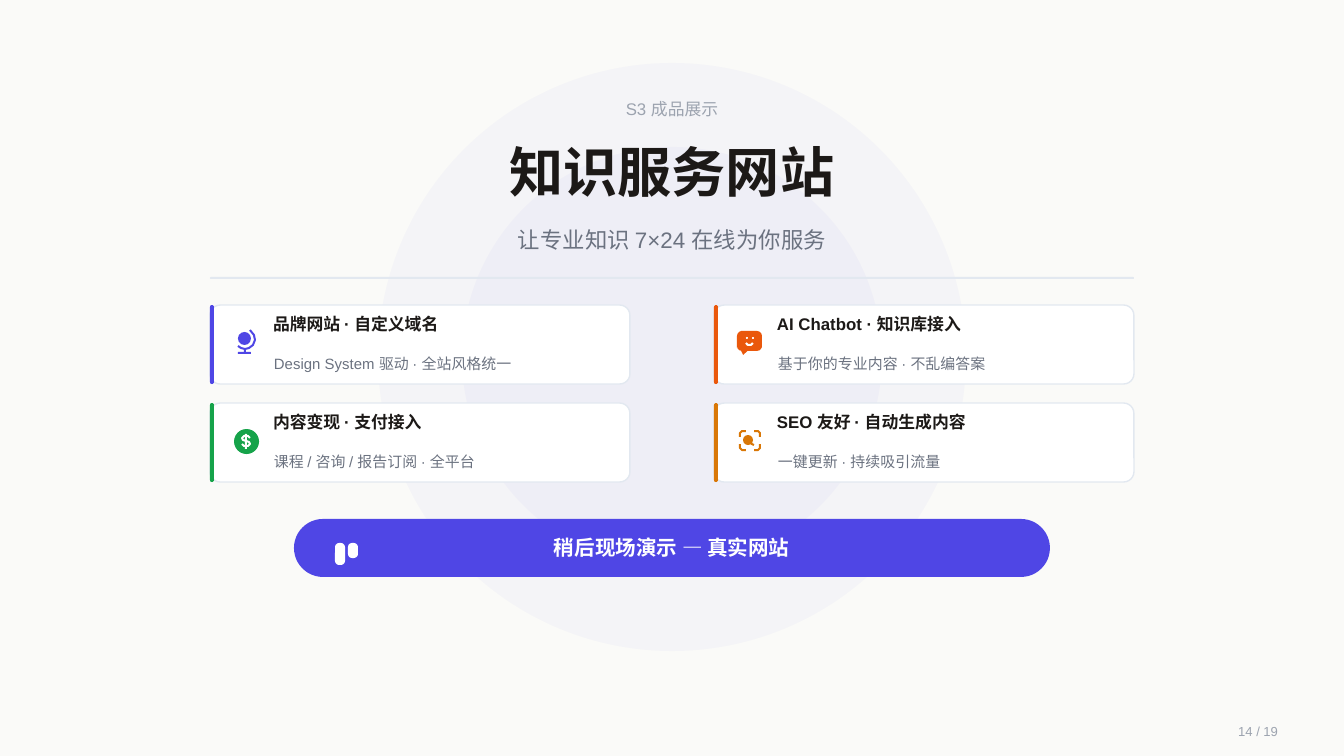
from lxml import etree
from pptx import Presentation, util as u
from pptx.dml.color import RGBColor
from pptx.enum import shapes, text
from pptx.oxml.ns import qn

PX = 6804  # EMU in one px; the slide is 1344 px wide
INDIGO = RGBColor(0x4F, 0x46, 0xE5)
ORANGE = RGBColor(0xEA, 0x58, 0x0C)
GREEN = RGBColor(0x16, 0xA3, 0x4A)
AMBER = RGBColor(0xD9, 0x77, 0x06)
PAPER = RGBColor(0xFA, 0xFA, 0xF8)
WHITE = RGBColor(0xFF, 0xFF, 0xFF)
BORDER = RGBColor(0xE2, 0xE8, 0xF0)
INK = RGBColor(0x1C, 0x19, 0x17)
GREY = RGBColor(0x6B, 0x72, 0x80)
PALE = RGBColor(0x9C, 0xA3, 0xAF)

RECT = shapes.MSO_SHAPE.RECTANGLE
ROUND = shapes.MSO_SHAPE.ROUNDED_RECTANGLE
OVAL = shapes.MSO_SHAPE.OVAL
BUBBLE = shapes.MSO_SHAPE.ROUNDED_RECTANGULAR_CALLOUT
LEFT, CENTER, RIGHT = text.PP_ALIGN.LEFT, text.PP_ALIGN.CENTER, text.PP_ALIGN.RIGHT

presentation = Presentation()
presentation.slide_width = 1344 * PX
presentation.slide_height = 756 * PX
slide = presentation.slides.add_slide(presentation.slide_layouts[6])


def add_shape(kind, x, y, w, h, fill, adjust=(), line=None, opacity=None):
    """Opacity is a whole percentage."""
    shape = slide.shapes.add_shape(kind, x * PX, y * PX, w * PX, h * PX)
    shape.shadow.inherit = False
    for index, value in enumerate(adjust):
        shape.adjustments[index] = value
    shape.fill.solid()
    shape.fill.fore_color.rgb = fill
    if opacity:
        color = shape.fill._xPr.find(".//" + qn("a:srgbClr"))
        etree.SubElement(color, qn("a:alpha")).set("val", str(opacity * 1000))
    if line is None:
        shape.line.fill.background()
    else:
        shape.line.color.rgb = line
        shape.line.width = u.Pt(0.75)


def add_text(content, x, y, w, h, size, color, bold=False, align=LEFT):
    frame = slide.shapes.add_textbox(x * PX, y * PX, w * PX, h * PX).text_frame
    frame.margin_left = frame.margin_right = frame.margin_top = frame.margin_bottom = 0
    frame.word_wrap = True
    frame.auto_size = text.MSO_AUTO_SIZE.SHAPE_TO_FIT_TEXT
    paragraph = frame.paragraphs[0]
    paragraph.alignment = align
    run = paragraph.add_run()
    run.text = content
    run.font.name = "Arial"
    run.font.size = u.Pt(size)
    run.font.bold = bold
    run.font.color.rgb = color


# Background
add_shape(RECT, 0, 0, 1344, 756, PAPER)
add_shape(OVAL, 378, 63, 588, 588, INDIGO, opacity=3)
add_shape(OVAL, 462, 147, 420, 420, INDIGO, opacity=3)

# Heading
add_text("S3 成品展示", 618, 99, 108, 27, 9, PALE, align=CENTER)
add_text("知识服务网站", 469, 138, 406, 88, 29, INK, bold=True, align=CENTER)
add_text("让专业知识 7×24 在线为你服务", 486, 226, 372, 38, 12, GREY, align=CENTER)
add_shape(ROUND, 210, 277, 924, 2, BORDER, [0.5])

# Icon parts are placed from the card's top left corner
globe_solids = [(OVAL, 28, 27, 13, 13, INDIGO), (ROUND, 34, 43, 2, 6, INDIGO),
                (ROUND, 28, 47, 13, 2, INDIGO)]
globe_strokes = [(INDIGO, [(40, 25), (44, 30), (45, 35), (43, 40), (39, 43),
                           (35, 44), (31, 43), (28, 41)])]
chat_solids = [(BUBBLE, 23, 26, 25, 20, ORANGE, [-0.25, 0.7, 0.25]),
               (OVAL, 32, 32, 2, 2, WHITE), (OVAL, 38, 32, 2, 2, WHITE)]
chat_strokes = [(WHITE, [(32, 38), (34, 40), (37, 40), (39, 38)])]
coin_solids = [(OVAL, 24, 26, 25, 25, GREEN), (ROUND, 35, 31, 2, 15, WHITE)]
coin_strokes = [(WHITE, [(40, 35), (38, 33), (34, 33), (32, 35), (33, 37),
                         (39, 39), (40, 41), (38, 43), (34, 43), (32, 41)])]
search_solids = [(OVAL, 29, 32, 10, 10, AMBER)]
search_strokes = [(AMBER, [(36, 39), (38, 41), (40, 42)])]
for x, step_x in ((26, 1), (46, -1)):
    for y, step_y in ((28, 1), (47, -1)):
        search_strokes.append((AMBER, [(x, y + 6 * step_y), (x, y + 2 * step_y),
                                       (x + 2 * step_x, y), (x + 6 * step_x, y)]))

cards = [
    ("品牌网站 · 自定义域名", 210, "Design System 驱动 · 全站风格统一", 278,
     INDIGO, globe_solids, globe_strokes),
    ("AI Chatbot · 知识库接入", 230, "基于你的专业内容 · 不乱编答案", 242,
     ORANGE, chat_solids, chat_strokes),
    ("内容变现 · 支付接入", 190, "课程 / 咨询 / 报告订阅 · 全平台", 247,
     GREEN, coin_solids, coin_strokes),
    ("SEO 友好 · 自动生成内容", 233, "一键更新 · 持续吸引流量", 191,
     AMBER, search_solids, search_strokes),
]
for index, (title, title_width, detail, detail_width, accent, solids, strokes) in enumerate(cards):
    row, column = divmod(index, 2)
    left, top = 210 + 504 * column, 305 + 98 * row
    add_shape(ROUND, left, top, 420, 79, WHITE, [0.13], line=BORDER)
    add_shape(ROUND, left, top, 4, 79, accent, [0.5])
    for kind, x, y, w, h, fill, *adjust in solids:
        add_shape(kind, left + x, top + y, w, h, fill, *adjust)
    for color, points in strokes:
        (start_x, start_y), *others = [(left + x, top + y) for x, y in points]
        builder = slide.shapes.build_freeform(start_x, start_y, scale=PX)
        builder.add_line_segments(others, close=False)
        stroke = builder.convert_to_shape()
        stroke.shadow.inherit = False
        stroke.fill.background()
        stroke.line.color.rgb = color
        stroke.line.width = 2 * PX
    add_text(title, left + 63, top + 9, title_width, 27, 9, INK, bold=True)
    add_text(detail, left + 64, top + 50, detail_width, 23, 8, GREY)

# Demo banner
add_shape(ROUND, 294, 519, 756, 58, INDIGO, [0.5])
add_shape(ROUND, 335, 543, 10, 22, WHITE, [0.4])
add_shape(ROUND, 348, 543, 10, 15, WHITE, [0.4])
add_text("稍后现场演示 — 真实网站", 529, 535, 286, 34, 11, WHITE, bold=True, align=CENTER)

add_text("14 / 19", 1231, 723, 47, 22, 7, PALE, align=RIGHT)

presentation.save("out.pptx")
